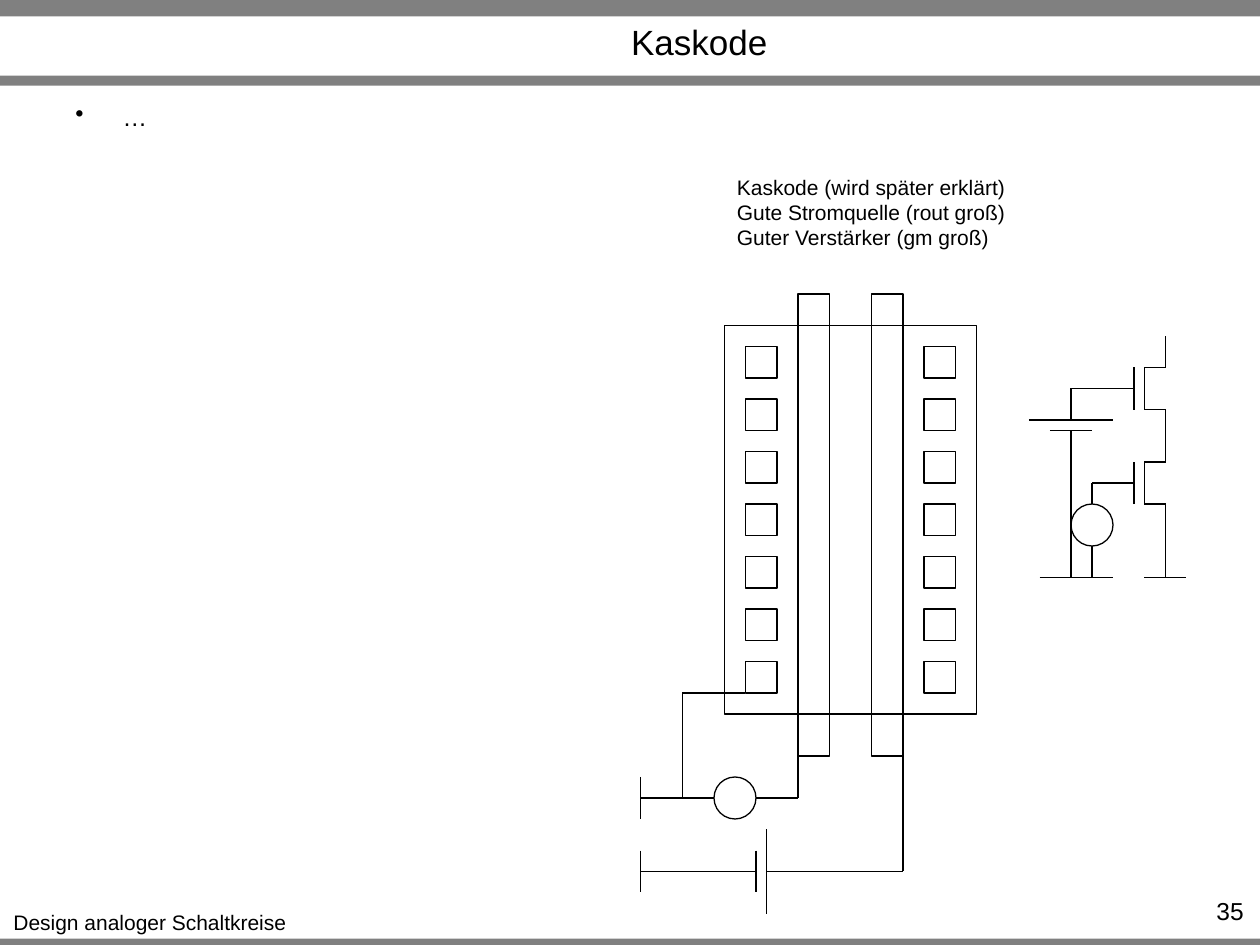
"""Build the slide on the cascode with its layout and its circuit."""
from typing import NamedTuple

from lxml import etree
from pptx import Presentation
from pptx.dml.color import RGBColor
from pptx.enum.shapes import MSO_CONNECTOR, MSO_SHAPE
from pptx.enum.text import MSO_ANCHOR, PP_ALIGN
from pptx.oxml.ns import qn
from pptx.util import Pt

RECTANGLE, OVAL = MSO_SHAPE.RECTANGLE, MSO_SHAPE.OVAL
STRAIGHT = MSO_CONNECTOR.STRAIGHT
LEFT, CENTER, RIGHT = PP_ALIGN.LEFT, PP_ALIGN.CENTER, PP_ALIGN.RIGHT
TOP, MIDDLE = MSO_ANCHOR.TOP, MSO_ANCHOR.MIDDLE
BLACK = RGBColor(0x00, 0x00, 0x00)
GRAY = RGBColor(0x80, 0x80, 0x80)
FONT = "Arial"
LINE_WIDTH = 0.75
CONTACT_SIZE = 18
SOURCE_SIZE = 24


class Box(NamedTuple):
    """Position and size in points."""

    left: float
    top: float
    width: float
    height: float


class Wire(NamedTuple):
    """Start and end of a straight line in points."""

    x1: float
    y1: float
    x2: float
    y2: float


class Label(NamedTuple):
    """A text box with one paragraph per line."""

    box: Box
    lines: tuple[str, ...]
    size: float
    align: PP_ALIGN = LEFT
    anchor: MSO_ANCHOR = TOP
    wrap: bool = True
    bullet_indent: float = 0


BARS = (Box(0, 536.4, 720, 5.76), Box(0, 0, 720, 9.36), Box(0, 43.2, 720, 5.76))
LABELS = (
    Label(Box(0, 516.2, 171.4, 21.6), ("Design analoger Schaltkreise",), 12, CENTER, wrap=False),
    Label(Box(93.6, 10.1, 612, 27.4), ("Kaskode",), 20, CENTER, MIDDLE),
    Label(Box(36, 54.7, 648, 35.3), ("…",), 14, bullet_indent=27),
    Label(Box(655.2, 508.3, 62.6, 17.3), ("35",), 14, RIGHT),
    Label(
        Box(414, 96, 169.2, 51),
        (
            "Kaskode (wird später erklärt)",
            "Gute Stromquelle (rout groß)",
            "Guter Verstärker (gm groß)",
        ),
        12,
        wrap=False,
    ),
)
ACTIVE_AREA = Box(414, 186, 144, 222)
GATE_FINGERS = (Box(456, 168, 18, 264), Box(498, 168, 18, 264))
CONTACTS = tuple(
    Box(left, 198 + 30 * row, CONTACT_SIZE, CONTACT_SIZE)
    for row in range(7)
    for left in (426, 528)
)
SIGNAL_SOURCES = (
    Box(408, 444, SOURCE_SIZE, SOURCE_SIZE),
    Box(612, 288, SOURCE_SIZE, SOURCE_SIZE),
)
LAYOUT_WIRES = (
    Wire(390, 456, 408, 456),
    Wire(438, 498, 516, 498),
    Wire(516, 432, 516, 498),
    Wire(426, 396, 390, 396),
    Wire(390, 396, 390, 456),
    Wire(366, 456, 408, 456),
    Wire(366, 444, 366, 468),
    Wire(366, 498, 432, 498),
    Wire(366, 486, 366, 510),
    Wire(432, 456, 456, 456),
    Wire(456, 432, 456, 456),
)
CIRCUIT_WIRES = (
    Wire(624, 288, 624, 276),
    Wire(636, 276, 624, 276),
    Wire(624, 330, 624, 312),
    Wire(594, 330, 636, 330),
    Wire(654, 330, 678, 330),
    Wire(666, 330, 666, 306),
    Wire(636, 222, 612, 222),
    Wire(612, 222, 612, 240),
    Wire(612, 246, 612, 330),
)
LAYOUT_BATTERY = (Wire(432, 486, 432, 510), Wire(438, 474, 438, 522))
CIRCUIT_BATTERY = (Wire(600, 246, 624, 246), Wire(588, 240, 636, 240))
TRANSISTOR = (
    Wire(30, 12, 18, 12),
    Wire(18, 12, 18, -12),
    Wire(0, 0, 12, 0),
    Wire(12, 12, 12, -12),
    Wire(30, -12, 18, -12),
    Wire(30, -12, 30, -30),
    Wire(30, 30, 30, 12),
)
TRANSISTOR_GATES = ((636, 276), (636, 222))


def add_bar(shapes, box: Box) -> None:
    """Add a filled bar without an outline."""
    shape = shapes.add_shape(RECTANGLE, *map(Pt, box))
    shape.shadow.inherit = False
    shape.fill.solid()
    shape.fill.fore_color.rgb = GRAY
    shape.line.fill.background()


def add_outline(shapes, kind: MSO_SHAPE, box: Box) -> None:
    """Add an unfilled shape with a thin black outline."""
    shape = shapes.add_shape(kind, *map(Pt, box))
    shape.shadow.inherit = False
    shape.fill.background()
    shape.line.color.rgb = BLACK
    shape.line.width = Pt(LINE_WIDTH)


def add_wires(shapes, wires: tuple[Wire, ...], x: float = 0, y: float = 0) -> None:
    """Add straight black lines, shifted by x and y."""
    for wire in wires:
        connector = shapes.add_connector(
            STRAIGHT, Pt(wire.x1 + x), Pt(wire.y1 + y), Pt(wire.x2 + x), Pt(wire.y2 + y)
        )
        connector.line.color.rgb = BLACK
        connector.line.width = Pt(LINE_WIDTH)
        etree.SubElement(connector._element.spPr, qn("a:effectLst"))


def add_bullet(paragraph, indent: float) -> None:
    """Give a paragraph a round bullet and a hanging indent."""
    properties = paragraph._p.get_or_add_pPr()
    properties.set("marL", str(Pt(indent)))
    properties.set("indent", str(-Pt(indent)))
    etree.SubElement(properties, qn("a:buChar"), char="•")


def add_label(shapes, label: Label) -> None:
    """Add a text box, run by run."""
    frame = shapes.add_textbox(*map(Pt, label.box)).text_frame
    frame.word_wrap = label.wrap
    frame.vertical_anchor = label.anchor
    for index, text in enumerate(label.lines):
        paragraph = frame.add_paragraph() if index else frame.paragraphs[0]
        paragraph.alignment = label.align
        if label.bullet_indent:
            add_bullet(paragraph, label.bullet_indent)
        run = paragraph.add_run()
        run.text = text
        run.font.name = FONT
        run.font.size = Pt(label.size)
        run.font.color.rgb = BLACK


def main() -> None:
    """Build and save the presentation."""
    presentation = Presentation()
    presentation.slide_width, presentation.slide_height = Pt(720), Pt(540)
    shapes = presentation.slides.add_slide(presentation.slide_layouts[6]).shapes
    for bar in BARS:
        add_bar(shapes, bar)
    for label in LABELS:
        add_label(shapes, label)
    for box in (ACTIVE_AREA, *GATE_FINGERS, *CONTACTS):
        add_outline(shapes, RECTANGLE, box)
    for box in SIGNAL_SOURCES:
        add_outline(shapes, OVAL, box)
    add_wires(shapes, LAYOUT_WIRES + CIRCUIT_WIRES)
    for battery in (LAYOUT_BATTERY, CIRCUIT_BATTERY):
        add_wires(shapes.add_group_shape().shapes, battery)
    for x, y in TRANSISTOR_GATES:
        add_wires(shapes.add_group_shape().shapes, TRANSISTOR, x, y)
    presentation.save("out.pptx")


if __name__ == "__main__":
    main()
